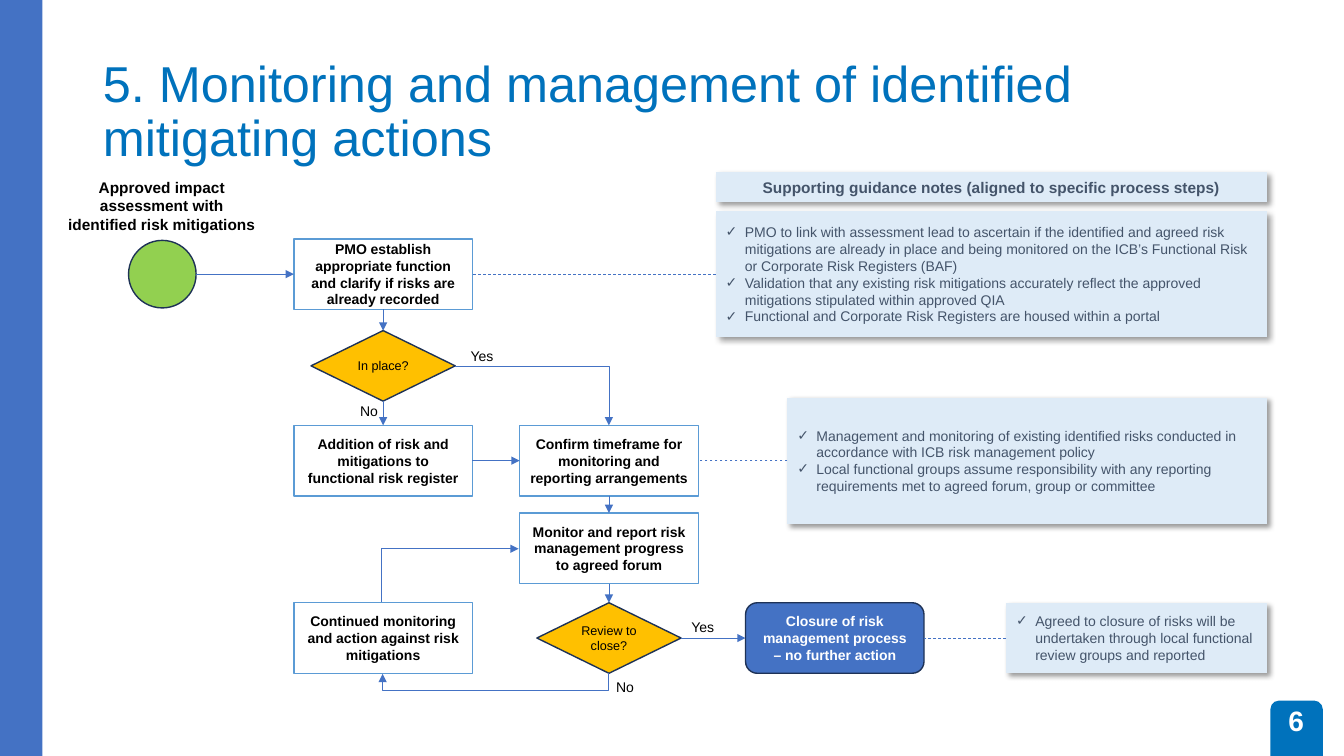
from lxml.etree import SubElement
from pptx import Presentation
from pptx.dml.color import RGBColor
from pptx.enum.dml import MSO_LINE
from pptx.enum.shapes import MSO_CONNECTOR, MSO_SHAPE
from pptx.enum.text import MSO_ANCHOR, MSO_AUTO_SIZE, PP_ALIGN
from pptx.oxml.ns import qn
from pptx.util import Inches, Pt

TITLE = "5. Monitoring and management of identified mitigating actions"
START_LABEL = "Approved impact assessment with identified risk mitigations"
NOTES_HEADING = "Supporting guidance notes (aligned to specific process steps)"

# name: (kind, column, row, text)
STEPS = {
    "start": ("start", 0, 0, ""),
    "establish": ("process", 1, 0, "PMO establish appropriate function and clarify if risks are already recorded"),
    "in place": ("decision", 1, 1, "In place?"),
    "addition": ("process", 1, 2, "Addition of risk and mitigations to functional risk register"),
    "confirm": ("process", 2, 2, "Confirm timeframe for monitoring and reporting arrangements"),
    "monitor": ("process", 2, 3, "Monitor and report risk management progress to agreed forum"),
    "continued": ("process", 1, 4, "Continued monitoring and action against risk mitigations"),
    "review": ("decision", 2, 4, "Review to close?"),
    "closure": ("end", 3, 4, "Closure of risk management process – no further action"),
}
# name: (left, row, height, bullets)
NOTES = {
    "establish": (7.1, 0, 1.25, [
        "PMO to link with assessment lead to ascertain if the identified and agreed risk mitigations are "
        "already in place and being monitored on the ICB’s Functional Risk or Corporate Risk Registers (BAF)",
        "Validation that any existing risk mitigations accurately reflect the approved mitigations "
        "stipulated within approved QIA",
        "Functional and Corporate Risk Registers are housed within a portal"]),
    "confirm": (7.81, 2, 1.25, [
        "Management and monitoring of existing identified risks conducted in accordance with ICB risk "
        "management policy",
        "Local functional groups assume responsibility with any reporting requirements met to agreed "
        "forum, group or committee"]),
    "closure": (9.98, 4, 0.7, [
        "Agreed to closure of risks will be undertaken through local functional review groups and reported"]),
}
TOP, LEFT, BOTTOM, RIGHT = range(4)
ARROWS = [
    ("start", RIGHT, "establish", LEFT),
    ("establish", BOTTOM, "in place", TOP),
    ("in place", BOTTOM, "addition", TOP),
    ("addition", RIGHT, "confirm", LEFT),
    ("confirm", BOTTOM, "monitor", TOP),
    ("monitor", BOTTOM, "review", TOP),
    ("review", RIGHT, "closure", LEFT),
]
# from, side, to, side, preset, (left, top, width, height), other attributes, adjustment
ELBOWS = [
    ("in place", RIGHT, "confirm", TOP, "bentConnector2", (4.51, 3.63, 1.53, 0.59), {}, None),
    ("continued", TOP, "monitor", LEFT, "bentConnector2", (4.2, 5.03, 0.53, 1.36),
     {"rot": "5400000", "flipH": "1", "flipV": "1"}, None),
    ("review", BOTTOM, "continued", BOTTOM, "bentConnector3", (4.91, 5.56, 0.01, 2.24),
     {"rot": "5400000"}, 1800000),
]
ANSWERS = [("Yes", 4.56, 3.4, 0.44), ("No", 3.47, 3.94, 0.38),
           ("Yes", 6.75, 6.09, 0.44), ("No", 6.01, 6.68, 0.38)]

COLORS = {"title": "0072BC", "bar": "4472C4", "white": "FFFFFF", "black": "000000",
          "outline": "1E3256", "box line": "5B9BD5", "start": "92D050",
          "decision": "FFC000", "note": "DEEBF7", "note text": "44546A"}
# kind: (preset, width, height, fill, line, text colour, text size, bold)
KINDS = {
    "start": (MSO_SHAPE.FLOWCHART_CONNECTOR, 0.67, 0.67, "start", "outline", "black", 10, False),
    "process": (MSO_SHAPE.FLOWCHART_PROCESS, 1.77, 0.7, "white", "box line", "black", 10, True),
    "decision": (MSO_SHAPE.FLOWCHART_DECISION, 1.43, 0.7, "decision", "outline", "black", 9, False),
    "end": (MSO_SHAPE.FLOWCHART_ALTERNATE_PROCESS, 1.77, 0.7, "bar", "outline", "white", 10, True),
}
COLUMNS = [1.61] + [3.8 + 2.24 * column for column in range(3)]
ROWS = [2.72, 3.63, 4.57, 5.44, 6.33]
NOTES_RIGHT = 12.57


def rgb(name):
    return RGBColor.from_string(COLORS[name])


def write(paragraph, text, size, color, bold=False, align=PP_ALIGN.CENTER):
    paragraph.alignment = align
    run = paragraph.add_run()
    run.text = text
    run.font.name = "Arial"
    run.font.size = Pt(size)
    run.font.bold = bold
    run.font.color.rgb = rgb(color)


def add_box(preset, left, top, width, height, fill, line=None):
    shape = slide.shapes.add_shape(preset, Inches(left), Inches(top), Inches(width), Inches(height))
    shape.shadow.inherit = False
    shape.fill.solid()
    shape.fill.fore_color.rgb = rgb(fill)
    if line:
        shape.line.color.rgb = rgb(line)
        shape.line.width = Pt(1)
    else:
        shape.line.fill.background()
    shape.text_frame.word_wrap = True
    shape.text_frame.vertical_anchor = MSO_ANCHOR.MIDDLE
    return shape


def add_note(left, top, height):
    """Pale box with a soft shadow, ending at the right edge of the notes."""
    shape = add_box(MSO_SHAPE.FLOWCHART_PROCESS, left, top, NOTES_RIGHT - left, height, "note")
    effects = shape._element.spPr.find(qn("a:effectLst"))
    shadow = SubElement(effects, qn("a:outerShdw"), blurRad=str(Pt(4)), dist=str(Pt(3)),
                        dir="2700000", algn="tl", rotWithShape="0")
    color = SubElement(shadow, qn("a:srgbClr"), val=COLORS["black"])
    SubElement(color, qn("a:alpha"), val="40000")
    return shape


def add_check_mark(paragraph):
    properties = paragraph._p.get_or_add_pPr()
    properties.set("marL", str(Inches(0.19)))
    properties.set("indent", str(-Inches(0.19)))
    SubElement(properties, qn("a:buFont"), typeface="Arial")
    SubElement(properties, qn("a:buChar"), char="✓")


def add_link(begin, begin_side, end, end_side, kind=MSO_CONNECTOR.STRAIGHT, dashed=False):
    connector = slide.shapes.add_connector(kind, begin.left + begin.width, begin.top + begin.height // 2, 0, 0)
    if begin is not steps["start"]:  # a circle numbers its sites differently
        connector.begin_connect(begin, begin_side)
    connector.end_connect(end, end_side)
    connector.line.color.rgb = rgb("bar")
    connector.line.width = Pt(0.5)
    if dashed:
        connector.line.dash_style = MSO_LINE.DASH
    else:
        SubElement(connector.line._get_or_add_ln(), qn("a:tailEnd"), type="triangle")
    SubElement(connector._element.spPr, qn("a:effectLst"))
    return connector


def add_label(text, left, top, width, height, size, color, bold=False):
    label = slide.shapes.add_textbox(Inches(left), Inches(top), Inches(width), Inches(height))
    label.text_frame.word_wrap = False
    write(label.text_frame.paragraphs[0], text, size, color, bold)
    return label


presentation = Presentation()
presentation.slide_width, presentation.slide_height = Inches(13.33), Inches(7.5)
slide = presentation.slides.add_slide(presentation.slide_layouts[5])

title = slide.shapes.title
title.left, title.top, title.width, title.height = map(Inches, (0.92, 0.4, 10.23, 1.45))
title.text_frame.word_wrap = True
title.text_frame.auto_size = MSO_AUTO_SIZE.NONE
title.text_frame.vertical_anchor = MSO_ANCHOR.MIDDLE
title.text_frame.paragraphs[0].line_spacing = 0.9
write(title.text_frame.paragraphs[0], TITLE, 36, "title", align=PP_ALIGN.LEFT)

add_box(MSO_SHAPE.RECTANGLE, 0, 0, 0.42, 7.5, "bar")
add_box(MSO_SHAPE.ROUND_2_SAME_RECTANGLE, 12.6, 6.95, 0.52, 0.55, "title")
page_number = add_label("6", 12.59, 6.95, 0.53, 0.4, 20, "white", True)
page_number.text_frame.vertical_anchor = MSO_ANCHOR.MIDDLE

start_label = add_box(MSO_SHAPE.FLOWCHART_PROCESS, 0.55, 1.71, 2.11, 0.66, "white")
write(start_label.text_frame.paragraphs[0], START_LABEL, 11, "black", True)
heading = add_note(7.1, 1.71, 0.29)
write(heading.text_frame.paragraphs[0], NOTES_HEADING, 11, "note text", True)

steps = {}
for name, (kind, column, row, text) in STEPS.items():
    preset, width, height, fill, line, color, size, bold = KINDS[kind]
    step = add_box(preset, COLUMNS[column] - width / 2, ROWS[row] - height / 2, width, height, fill, line)
    if kind == "decision":
        frame = step.text_frame
        frame.margin_left = frame.margin_right = frame.margin_top = frame.margin_bottom = 0
    if text:
        write(step.text_frame.paragraphs[0], text, size, color, bold)
    steps[name] = step

for name, (left, row, height, bullets) in NOTES.items():
    note = add_note(left, ROWS[row] - height / 2, height)
    for index, bullet in enumerate(bullets):
        paragraph = note.text_frame.add_paragraph() if index else note.text_frame.paragraphs[0]
        add_check_mark(paragraph)
        write(paragraph, bullet, 10, "note text", align=PP_ALIGN.LEFT)
    add_link(note, LEFT, steps[name], RIGHT, dashed=True)

for begin, begin_side, end, end_side in ARROWS:
    add_link(steps[begin], begin_side, steps[end], end_side)

for begin, begin_side, end, end_side, preset, place, attributes, adjustment in ELBOWS:
    elbow = add_link(steps[begin], begin_side, steps[end], end_side, MSO_CONNECTOR.ELBOW)
    transform = elbow._element.spPr.find(qn("a:xfrm"))
    for attribute in ("flipH", "flipV"):
        transform.attrib.pop(attribute, None)
    for attribute, value in attributes.items():
        transform.set(attribute, value)
    elbow.left, elbow.top, elbow.width, elbow.height = map(Inches, place)
    geometry = elbow._element.spPr.find(qn("a:prstGeom"))
    geometry.set("prst", preset)
    if adjustment:
        SubElement(geometry.find(qn("a:avLst")), qn("a:gd"), name="adj1", fmla=f"val {adjustment}")

for text, left, top, width in ANSWERS:
    add_label(text, left, top, width, 0.27, 10, "black")

presentation.save("out.pptx")
